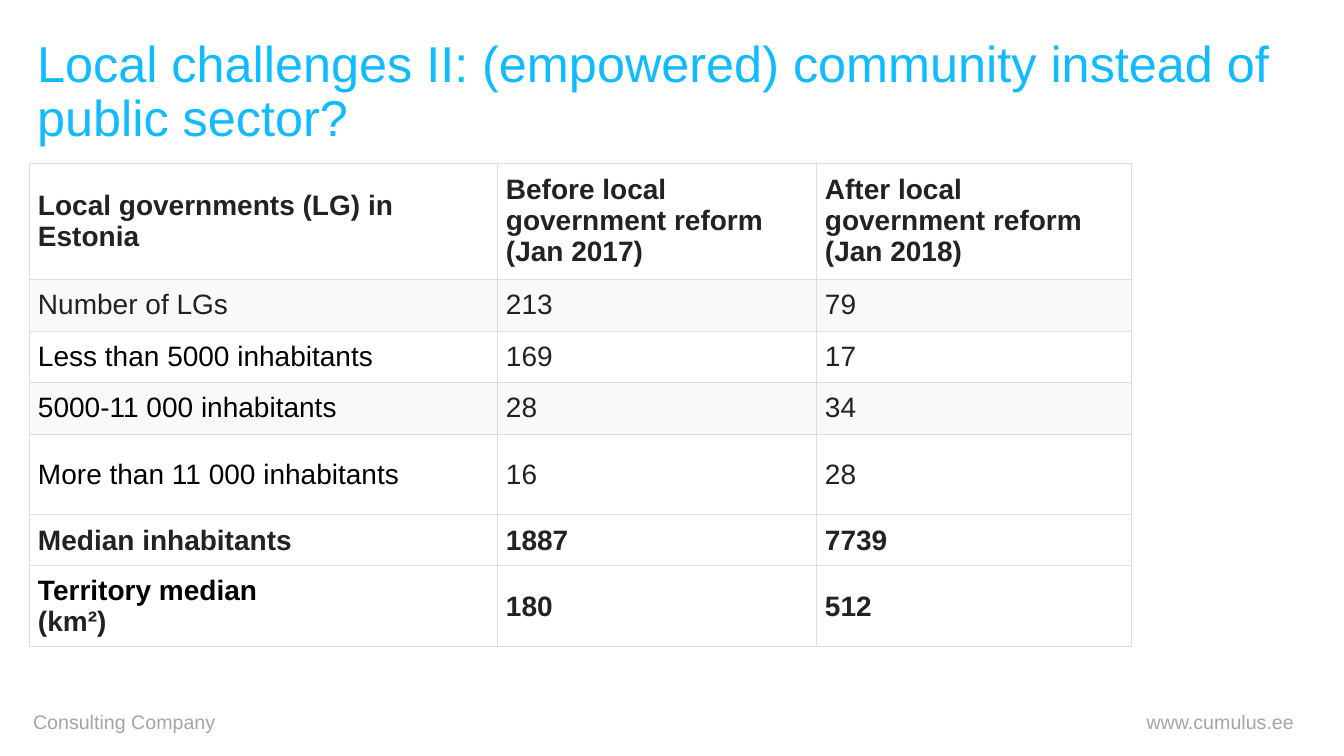
from lxml.etree import SubElement
from pptx import Presentation
from pptx.dml.color import RGBColor
from pptx.enum.text import MSO_ANCHOR, MSO_AUTO_SIZE, PP_ALIGN
from pptx.oxml.ns import qn
from pptx.util import Pt

PX = 914400 / 100.8
COLORS = {
    "title": "11BBFF",
    "text": "222222",
    "black": "000000",
    "footer": "A5A5A5",
    "border": "DDDDDD",
    "plain": "FFFFFF",
    "stripe": "F9F9F9",
}
TITLE = "Local challenges II: (empowered) community instead of public sector?"
COLUMN_WIDTHS = [468, 319, 316]
ROWS = [
    (116, "plain", True, [("Local governments (LG) in Estonia", "text")],
     "Before local government reform (Jan 2017)",
     "After local government reform (Jan 2018)"),
    (52, "stripe", False, [("Number of LGs", "text")], "213", "79"),
    (51, "plain", False, [("Less than 5000 inhabitants", "black")], "169", "17"),
    (52, "stripe", False, [("5000-11 000 inhabitants", "black")], "28", "34"),
    (81, "plain", False, [("More than 11 000 inhabitants", "black")], "16", "28"),
    (51, "plain", True, [("Median inhabitants", "text")], "1887", "7739"),
    (81, "plain", True, [("Territory median", "black"), ("(km²)", "text")], "180", "512"),
]


def px(length):
    return round(length * PX)


def color(name):
    return RGBColor.from_string(COLORS[name])


def add_span(para, text, size, color_name, bold=False):
    span = para.add_run()
    span.text = text
    span.font.name = "Arial"
    span.font.size = Pt(size)
    span.font.bold = bold
    span.font.color.rgb = color(color_name)


def add_title(page, left, top, width, height):
    title = page.shapes.title
    title.left, title.top, title.width, title.height = map(px, (left, top, width, height))
    frame = title.text_frame
    frame.word_wrap = True
    frame.auto_size = MSO_AUTO_SIZE.NONE
    frame.vertical_anchor = MSO_ANCHOR.MIDDLE
    para = frame.paragraphs[0]
    para.alignment = PP_ALIGN.LEFT
    para.line_spacing = 0.9
    add_span(para, TITLE, 36, "title")


def add_borders(cell):
    properties = cell._tc.get_or_add_tcPr()
    for position, side in enumerate(("a:lnL", "a:lnR", "a:lnT", "a:lnB")):
        line = SubElement(properties, qn(side), w=str(Pt(0.75)))
        fill = SubElement(line, qn("a:solidFill"))
        SubElement(fill, qn("a:srgbClr"), val=COLORS["border"])
        properties.insert(position, line)


def fill_cell(cell, lines, background, bold):
    cell.fill.solid()
    cell.fill.fore_color.rgb = color(background)
    add_borders(cell)
    cell.vertical_anchor = MSO_ANCHOR.MIDDLE
    cell.margin_left = cell.margin_right = px(9)
    cell.margin_top = cell.margin_bottom = px(5)
    frame = cell.text_frame
    for index, (text, color_name) in enumerate(lines):
        para = frame.add_paragraph() if index else frame.paragraphs[0]
        para.alignment = PP_ALIGN.LEFT
        add_span(para, text, 20, color_name, bold)


def add_reform_table(page, left, top):
    width = sum(COLUMN_WIDTHS)
    height = sum(row[0] for row in ROWS)
    table = page.shapes.add_table(
        len(ROWS), len(COLUMN_WIDTHS), px(left), px(top), px(width), px(height)
    ).table
    for column, column_width in zip(table.columns, COLUMN_WIDTHS):
        column.width = px(column_width)
    for row, (row_height, background, bold, label, before, after) in zip(table.rows, ROWS):
        row.height = px(row_height)
        contents = [label, [(before, "text")], [(after, "text")]]
        for cell, lines in zip(row.cells, contents):
            fill_cell(cell, lines, background, bold)


def add_footer(page, left, top, width, height):
    box_width = 238
    entries = [
        ("Consulting Company", left, PP_ALIGN.LEFT),
        ("www.cumulus.ee", left + width - box_width, PP_ALIGN.RIGHT),
    ]
    for text, box_left, alignment in entries:
        box = page.shapes.add_textbox(px(box_left), px(top), px(box_width), px(height))
        frame = box.text_frame
        frame.word_wrap = True
        frame.margin_left = frame.margin_right = px(4)
        frame.margin_top = frame.margin_bottom = px(4)
        para = frame.paragraphs[0]
        para.alignment = alignment
        add_span(para, text, 14, "footer")


def main():
    deck = Presentation()
    deck.slide_width = px(1344)
    deck.slide_height = px(756)
    page = deck.slides.add_slide(deck.slide_layouts[5])
    page.background.fill.solid()
    page.background.fill.fore_color.rgb = color("plain")
    add_footer(page, 29, 706, 1269, 27)
    add_title(page, 27, 20, 1270, 146)
    add_reform_table(page, 29, 163)
    deck.save("out.pptx")


if __name__ == "__main__":
    main()
